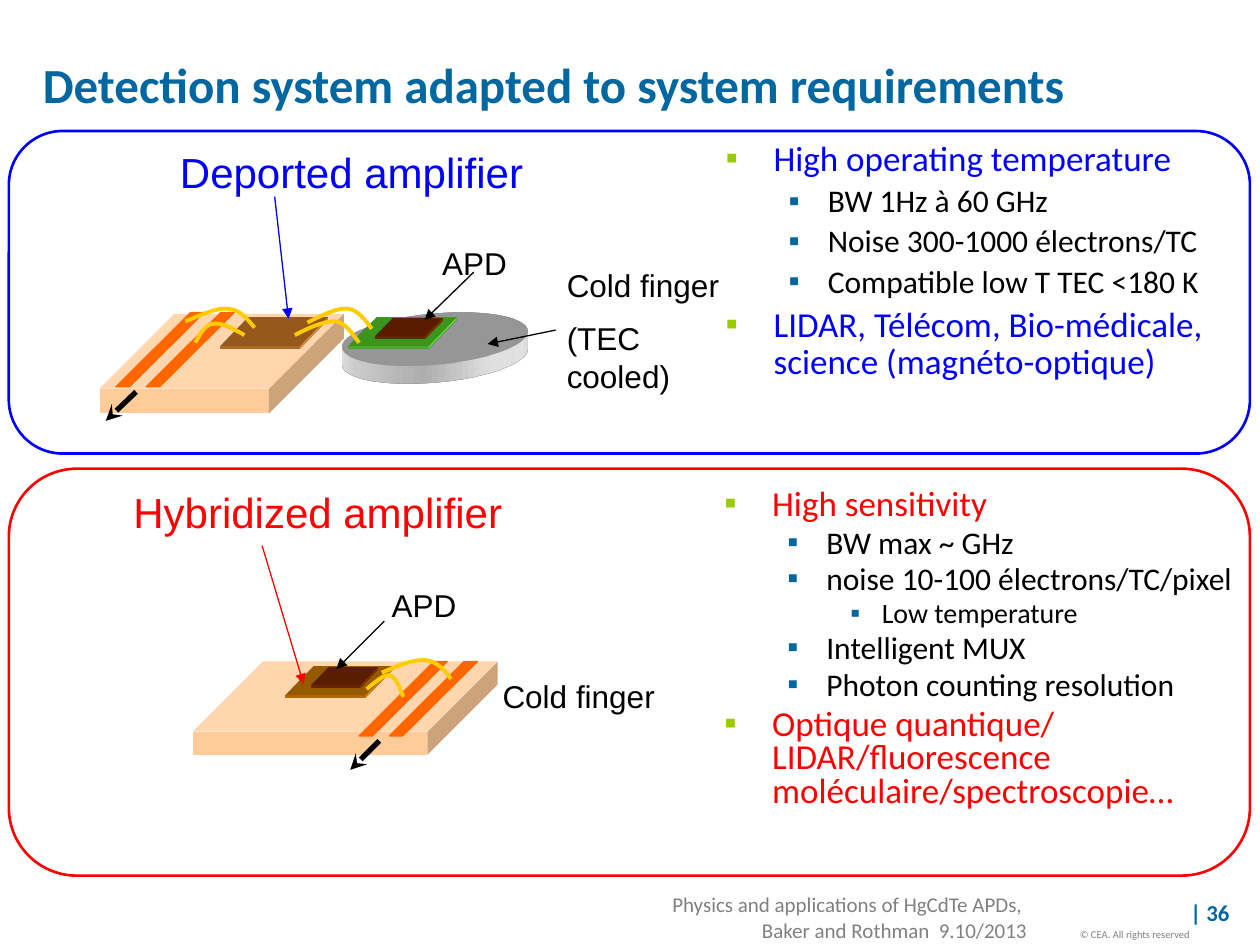
from dataclasses import dataclass
from typing import Optional

from lxml.etree import SubElement
from pptx import Presentation
from pptx.dml.color import RGBColor
from pptx.enum.shapes import MSO_CONNECTOR, MSO_SHAPE
from pptx.enum.text import MSO_ANCHOR, MSO_AUTO_SIZE, PP_ALIGN
from pptx.oxml.ns import qn
from pptx.util import Inches, Pt

TEAL = RGBColor(0x00, 0x67, 0xA1)
LIME = RGBColor(0x99, 0xCC, 0x00)
BLUE = RGBColor(0x00, 0x00, 0xFF)
RED = RGBColor(0xFF, 0x00, 0x00)
BLACK = RGBColor(0x00, 0x00, 0x00)
WHITE = RGBColor(0xFF, 0xFF, 0xFF)
GREY = RGBColor(0x80, 0x80, 0x80)
PEACH = RGBColor(0xFF, 0xCC, 0x99)
ORANGE = RGBColor(0xFF, 0x66, 0x00)
AMBER = RGBColor(0xFF, 0x99, 0x00)
APRICOT = RGBColor(0xFF, 0x99, 0x33)
GOLD = RGBColor(0xFF, 0xCC, 0x00)
GREEN = RGBColor(0x66, 0xFF, 0x33)
MAROON = RGBColor(0x99, 0x33, 0x00)

Point = tuple[float, float]
Box = tuple[float, float, float, float]


@dataclass
class Arrow:
    start: Point
    end: Point
    color: RGBColor = BLACK
    width: float = 0.75
    head: str = "triangle"


@dataclass
class Plate:
    """A flat part lying on the board, seen in oblique projection."""
    box: Box
    color: RGBColor
    thickness: float = 0.02
    kind: MSO_SHAPE = MSO_SHAPE.RECTANGLE


@dataclass
class Bullet:
    text: str
    level: int = 0


@dataclass
class Label:
    lines: list[str]
    box: Box
    size: float
    color: RGBColor = BLACK
    font: str = "Arial"
    bold: bool = False
    align: Optional[PP_ALIGN] = None
    wrap: bool = True
    inset: float = 0.05
    gap: float = 0


# Hanging indent, bullet offset and text size of each list level
LEVELS = [(0.38, 0.38, 20), (0.81, 0.31, 18), (1.25, 0.25, 16)]

deck = Presentation()
deck.slide_width, deck.slide_height = Inches(10), Inches(7.5)
page = deck.slides.add_slide(deck.slide_layouts[1])


def place(shape, box: Box) -> None:
    shape.left, shape.top, shape.width, shape.height = map(Inches, box)


def write(para, text: str, *, size: float, color: RGBColor, font: str = "Calibri",
          bold: bool = False) -> None:
    span = para.add_run()
    span.text = text
    span.font.size, span.font.name, span.font.bold = Pt(size), font, bold
    span.font.color.rgb = color


def add_label(label: Label) -> None:
    frame = page.shapes.add_textbox(*map(Inches, label.box)).text_frame
    frame.word_wrap = label.wrap
    frame.margin_top = frame.margin_bottom = Inches(label.inset)
    for index, line in enumerate(label.lines):
        para = frame.add_paragraph() if index else frame.paragraphs[0]
        para.alignment = label.align
        if index:
            para.space_before = Pt(label.gap)
        write(para, line, size=label.size, color=label.color, font=label.font, bold=label.bold)


def fill_list(box, bullets: list[Bullet], color: RGBColor, spacing: float) -> None:
    frame = box.text_frame
    frame.word_wrap = True
    frame.auto_size = MSO_AUTO_SIZE.NONE
    for index, bullet in enumerate(bullets):
        para = frame.add_paragraph() if index else frame.paragraphs[0]
        indent, hang, size = LEVELS[bullet.level]
        para.level = bullet.level
        para.line_spacing = spacing
        para.space_before = Pt(size * 0.2 if index else 0)
        props = para._p.get_or_add_pPr()
        props.set("marL", str(Inches(indent)))
        props.set("indent", str(-Inches(hang)))
        tint = SubElement(SubElement(props, qn("a:buClr")), qn("a:srgbClr"))
        tint.set("val", str(TEAL if bullet.level else LIME))
        SubElement(props, qn("a:buFont")).set("typeface", "Arial")
        SubElement(props, qn("a:buChar")).set("char", "▪")
        write(para, bullet.text, size=size, color=BLACK if bullet.level else color)


def paint(shape, fill: Optional[RGBColor], line: Optional[RGBColor], width: float) -> None:
    shape.shadow.inherit = False
    if fill is None:
        shape.fill.background()
    else:
        shape.fill.solid()
        shape.fill.fore_color.rgb = fill
    if line is None:
        shape.line.fill.background()
    else:
        shape.line.color.rgb = line
        shape.line.width = Pt(width)


def add_preset(kind: MSO_SHAPE, box: Box, *, adjust: Optional[float] = None,
               fill: Optional[RGBColor] = None, line: Optional[RGBColor] = None,
               width: float = 0.75):
    shape = page.shapes.add_shape(kind, *map(Inches, box))
    if adjust is not None:
        shape.adjustments[0] = adjust
    paint(shape, fill, line, width)
    return shape


def add_plate(plate: Plate) -> None:
    props = add_preset(plate.kind, plate.box, fill=plate.color)._element.spPr
    scene = SubElement(props, qn("a:scene3d"))
    camera = SubElement(scene, qn("a:camera"), prst="legacyObliqueTopRight")
    SubElement(camera, qn("a:rot"), lat="16200000", lon="0", rev="0")
    SubElement(scene, qn("a:lightRig"), rig="legacyFlat3", dir="b")
    solid = SubElement(props, qn("a:sp3d"), extrusionH=str(Inches(plate.thickness)),
                       prstMaterial="legacyMatte")
    SubElement(SubElement(solid, qn("a:extrusionClr")), qn("a:srgbClr"), val=str(plate.color))


def add_board(box: Box) -> None:
    add_preset(MSO_SHAPE.CUBE, box, adjust=0.753, fill=PEACH)


def add_tracks(left: float, top: float) -> None:
    for offset in (0, 0.24):
        add_preset(MSO_SHAPE.PARALLELOGRAM, (left + offset, top, 0.7, 0.59), adjust=1.006,
                   fill=ORANGE, line=ORANGE)


def add_wire(*points: Point) -> None:
    """Bond wire: a start point followed by three points for each cubic arc."""
    knots = [(Inches(x), Inches(y)) for x, y in points]
    builder = page.shapes.build_freeform(*knots[0])
    builder.add_line_segments(knots[1:], close=False)
    shape = builder.convert_to_shape()
    paint(shape, None, GOLD, 2.25)
    segments = list(shape._element.iter(qn("a:lnTo")))
    outline = segments[0].getparent()
    for first in range(0, len(segments), 3):
        arc = SubElement(outline, qn("a:cubicBezTo"))
        for segment in segments[first:first + 3]:
            arc.append(segment[0])
            outline.remove(segment)


def add_arrow(arrow: Arrow) -> None:
    ends = [Inches(value) for value in (*arrow.start, *arrow.end)]
    connector = page.shapes.add_connector(MSO_CONNECTOR.STRAIGHT, *ends)
    connector.line.color.rgb = arrow.color
    connector.line.width = Pt(arrow.width)
    SubElement(connector.line._get_or_add_ln(), qn("a:tailEnd")).set("type", arrow.head)
    SubElement(connector._element.spPr, qn("a:effectLst"))


# Title
title = page.shapes.title
place(title, (0.24, 0, 9.13, 1.33))
title.text_frame.auto_size = MSO_AUTO_SIZE.NONE
title.text_frame.vertical_anchor = MSO_ANCHOR.MIDDLE
title.text_frame.paragraphs[0].alignment = PP_ALIGN.LEFT
write(title.text_frame.paragraphs[0], "Detection system adapted to system requirements",
      size=28, color=TEAL, bold=True)

# Hybridized amplifier drawing
add_board((1.53, 5.25, 2.42, 0.74))
add_plate(Plate((2.38, 5.09, 0.63, 0.63), AMBER))
add_plate(Plate((2.54, 5.17, 0.39, 0.39), MAROON))
add_tracks(2.85, 5.25)
add_wire((3.58, 5.39), (3.53, 5.32), (3.47, 5.25), (3.38, 5.24), (3.29, 5.23), (3.16, 5.28), (3.03, 5.34))
add_wire((3.2, 5.53), (3.17, 5.45), (3.14, 5.37), (3.09, 5.36), (3.05, 5.35), (2.98, 5.41), (2.91, 5.47))

# Deported amplifier drawing
add_plate(Plate((2.75, 2.09, 1.41, 1.2), WHITE, 0.14, MSO_SHAPE.OVAL))
add_board((0.79, 2.49, 1.94, 0.79))
add_plate(Plate((2.88, 2.32, 0.63, 0.63), GREEN))
add_plate(Plate((3.05, 2.4, 0.39, 0.39), MAROON))
add_plate(Plate((1.86, 2.32, 0.63, 0.63), APRICOT))
add_wire((2.85, 2.72), (2.79, 2.64), (2.74, 2.56), (2.66, 2.55), (2.57, 2.55), (2.45, 2.6), (2.34, 2.66))
add_wire((2.95, 2.61), (2.9, 2.54), (2.84, 2.46), (2.76, 2.45), (2.68, 2.44), (2.56, 2.5), (2.44, 2.56))
add_tracks(0.92, 2.48)
add_wire((2.02, 2.6), (1.96, 2.53), (1.91, 2.46), (1.81, 2.45), (1.72, 2.44), (1.6, 2.5), (1.47, 2.55))
add_wire((1.55, 2.72), (1.59, 2.65), (1.63, 2.57), (1.7, 2.57), (1.76, 2.56), (1.85, 2.61), (1.94, 2.66))

# Bullet lists
body = page.placeholders[1]
place(body, (5.66, 1.07, 4.34, 2.7))
fill_list(body, [Bullet("High operating temperature"), Bullet("BW 1Hz à 60 GHz", 1),
                 Bullet("Noise 300-1000 électrons/TC", 1), Bullet("Compatible low T TEC <180 K", 1),
                 Bullet("LIDAR, Télécom, Bio-médicale, science (magnéto-optique)")], BLUE, 0.9)
hybrid_list = page.shapes.add_textbox(*map(Inches, (5.65, 3.84, 4.35, 2.95)))
fill_list(hybrid_list, [Bullet("High sensitivity"), Bullet("BW max ~ GHz", 1),
                        Bullet("noise 10-100 électrons/TC/pixel", 1), Bullet("Low temperature", 2),
                        Bullet("Intelligent MUX", 1), Bullet("Photon counting resolution", 1),
                        Bullet("Optique quantique/ LIDAR/fluorescence moléculaire/spectroscopie…")], RED, 0.8)

# Panel frames
for top, height, color in [(1.04, 2.56, BLUE), (3.72, 3.23, RED)]:
    add_preset(MSO_SHAPE.ROUNDED_RECTANGLE, (0.07, top, 9.85, height), adjust=0.167, line=color, width=1.5)

# Labels and footer
for label in [
    Label(["Deported amplifier"], (1.33, 1.11, 2.96, 0.5), 24, BLUE, wrap=False),
    Label(["Hybridized amplifier"], (0.96, 3.81, 3.18, 0.5), 24, RED, wrap=False),
    Label(["APD"], (3.41, 1.89, 0.72, 0.4), 18, wrap=False),
    Label(["APD"], (3.01, 4.6, 0.72, 0.4), 18, wrap=False),
    Label(["Cold finger", "(TEC cooled)"], (4.4, 2.11, 1.57, 1.06), 18, inset=0, gap=9),
    Label(["Cold finger"], (3.89, 5.37, 1.57, 0.3), 18, inset=0),
    Label(["© CEA. All rights reserved"], (7.72, 7.32, 1.82, 0.2), 6, GREY, "Calibri", align=PP_ALIGN.RIGHT),
    Label([" Physics and applications of HgCdTe APDs, ", "Baker and Rothman  9.10/2013"],
          (4.35, 7.03, 3.9, 0.5), 12, GREY, "Calibri", align=PP_ALIGN.RIGHT),
    Label(["| 36"], (9.35, 7.08, 0.77, 0.32), 13, TEAL, "Calibri", bold=True),
]:
    add_label(label)

# Arrows
for arrow in [Arrow((2.18, 1.56), (2.29, 2.53), BLUE), Arrow((2.08, 4.33), (2.41, 5.43), RED),
              Arrow((3.76, 2.16), (3.37, 2.54)), Arrow((4.41, 2.62), (3.87, 2.73)),
              Arrow((3.05, 4.93), (2.67, 5.31)),
              Arrow((3.01, 5.88), (2.78, 6.11), width=3, head="stealth"),
              Arrow((1.08, 3.11), (0.84, 3.34), width=3, head="stealth")]:
    add_arrow(arrow)

deck.save("out.pptx")
